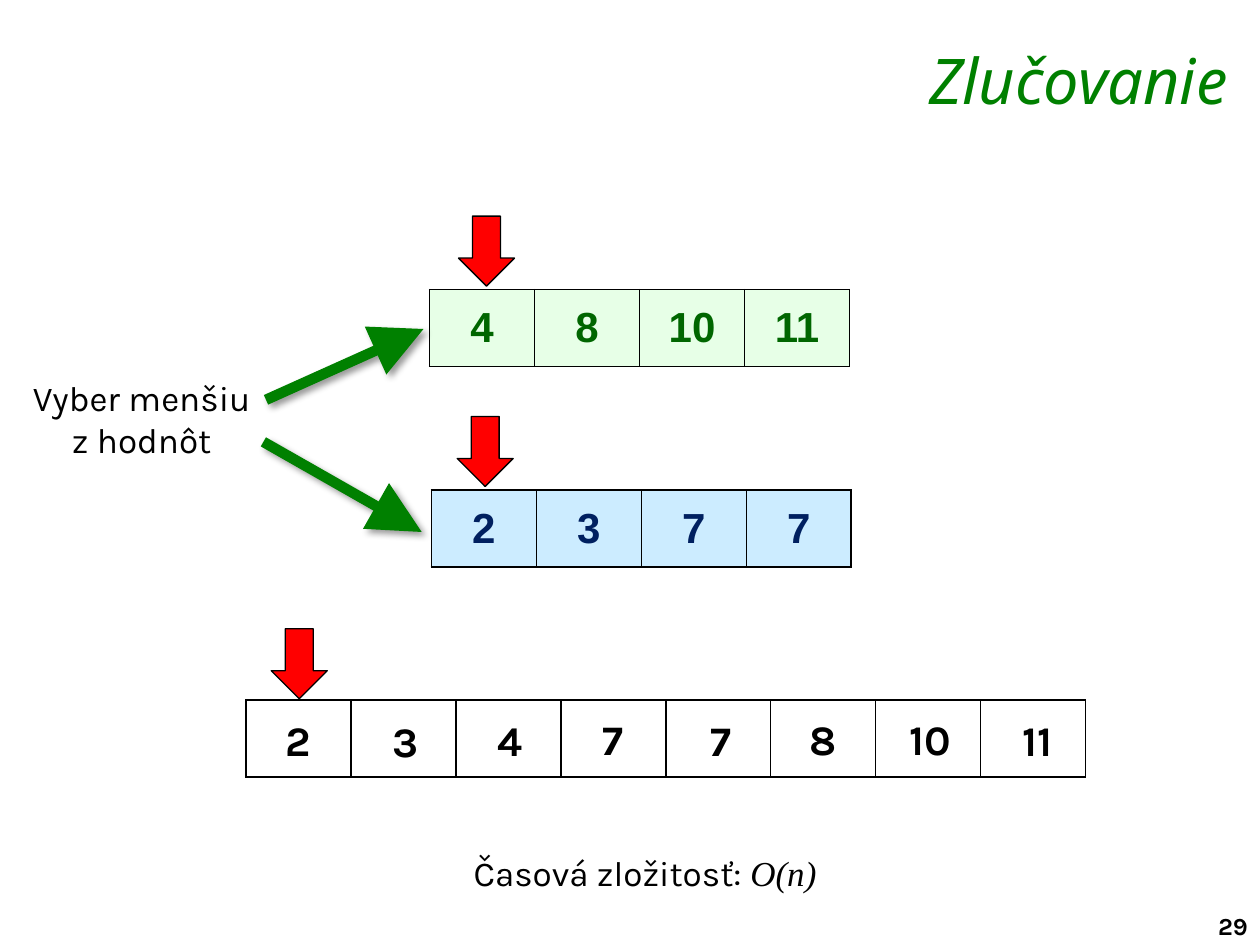
from dataclasses import dataclass

import lxml.etree
import pptx
import pptx.dml.color
import pptx.enum.shapes
import pptx.enum.text
import pptx.oxml
import pptx.oxml.ns
import pptx.util

Pt = pptx.util.Pt
RGB = pptx.dml.color.RGBColor.from_string
ALIGN = pptx.enum.text.PP_ALIGN
NS = pptx.oxml.ns.nsdecls("a")


@dataclass(frozen=True)
class Theme:
    black: str = "000000"
    green: str = "008000"
    red: str = "FF0000"
    green_fill: str = "E7FFE7"
    green_text: str = "006600"
    blue_fill: str = "CCECFF"
    blue_text: str = "002060"
    body: str = "Karla"
    heading: str = "Noto Sans"
    cells: str = "Arial"
    math: str = "Times New Roman"
    title_size: int = 36
    value_size: int = 24
    text_size: int = 20
    number_size: int = 14


T = Theme()
CELL_W, CELL_H = 60, 44


def add_text(s, text, box, size, align=ALIGN.CENTER, bold=False, wrap=True):
    """Add a one-paragraph text box in the body font and return its frame."""
    tf = s.shapes.add_textbox(*[Pt(v) for v in box]).text_frame
    tf.word_wrap = wrap
    p = tf.paragraphs[0]
    p.text = text
    p.alignment = align
    for r in p.runs:
        r.font.name, r.font.size, r.font.bold = T.body, Pt(size), bold
        r.font.color.rgb = RGB(T.black)
    return tf


def add_array(s, values, left, top, fill, color):
    """Add a one-row table with black borders."""
    n = len(values)
    tbl = s.shapes.add_table(1, n, Pt(left), Pt(top), Pt(n * CELL_W), Pt(CELL_H)).table
    tbl.first_row = tbl.horz_banding = False
    for i, value in enumerate(values):
        tbl.columns[i].width = Pt(CELL_W)
        cell = tbl.cell(0, i)
        cell.vertical_anchor = pptx.enum.text.MSO_ANCHOR.MIDDLE
        tc_pr = cell._tc.get_or_add_tcPr()
        for side in ("lnL", "lnR", "lnT", "lnB"):
            tc_pr.append(pptx.oxml.parse_xml(
                f'<a:{side} {NS} w="12700"><a:solidFill><a:srgbClr val="{T.black}"/>'
                f'</a:solidFill></a:{side}>'))
        if fill:
            cell.fill.solid()
            cell.fill.fore_color.rgb = RGB(fill)
        else:
            cell.fill.background()
        p = cell.text_frame.paragraphs[0]
        p.text = value
        p.alignment = ALIGN.CENTER
        for r in p.runs:
            r.font.name, r.font.size, r.font.bold = T.cells, Pt(T.value_size), True
            r.font.color.rgb = RGB(color)


prs = pptx.Presentation()
prs.slide_width, prs.slide_height = Pt(720), Pt(540)
s = prs.slides.add_slide(prs.slide_layouts[6])

# Slide number and title
add_text(s, "29", (689, 517, 37, 24), T.number_size, ALIGN.LEFT, True, wrap=False)
tf = add_text(s, "Zlučovanie", (165, 22.5, 543.5, 42), T.title_size, ALIGN.RIGHT)
tf.margin_top = Pt(1)
f = tf.paragraphs[0].runs[0].font
f.name, f.italic = T.heading, True
f.color.rgb = RGB(T.green)

# Merged array and the two sorted inputs
add_array(s, [""] * 8, 140.5, 400, None, T.black)
add_array(s, ["2", "3", "7", "7"], 246.5, 280, T.blue_fill, T.blue_text)
add_array(s, ["4", "8", "10", "11"], 245.5, 165.5, T.green_fill, T.green_text)

# Position markers
for left, top in ((262, 123.5), (261.25, 238), (155, 359.25)):
    sp = s.shapes.add_shape(pptx.enum.shapes.MSO_SHAPE.DOWN_ARROW,
                            Pt(left), Pt(top), Pt(32), Pt(40))
    sp.shadow.inherit = False
    sp.fill.solid()
    sp.fill.fore_color.rgb = RGB(T.red)
    sp.line.color.rgb = RGB(T.black)
    sp.line.width = Pt(0.75)

# Merged values: text, centre, top
for value, center, top in (("2", 170.5, 404.5), ("3", 232, 405.5), ("4", 291.5, 404.5),
                           ("7", 350.5, 404), ("7", 412, 404.5), ("8", 470.5, 404),
                           ("10", 531.5, 404), ("11", 593, 404.5)):
    add_text(s, value, (center - 29, top, 58, 36), T.value_size, bold=True)

# Instruction with arrows to both inputs
add_text(s, "Vyber menšiu\vz hodnôt", (0, 211.5, 162, 55.5), T.text_size)
for x1, y1, x2, y2 in ((152, 228.5, 242, 188), (150.5, 252.5, 241, 304)):
    ln = s.shapes.add_connector(pptx.enum.shapes.MSO_CONNECTOR.STRAIGHT,
                                Pt(x1), Pt(y1), Pt(x2), Pt(y2))
    ln.line.color.rgb = RGB(T.green)
    ln.line.width = Pt(6)
    tail = lxml.etree.SubElement(ln.line._get_or_add_ln(), pptx.oxml.ns.qn("a:tailEnd"))
    for key, val in (("type", "triangle"), ("w", "lg"), ("len", "lg")):
        tail.set(key, val)
    ln._element.spPr.append(pptx.oxml.parse_xml(
        f'<a:effectLst {NS}><a:outerShdw blurRad="{Pt(4)}" dist="{Pt(3)}" dir="2700000">'
        f'<a:srgbClr val="{T.black}"><a:alpha val="40000"/></a:srgbClr>'
        f'</a:outerShdw></a:effectLst>'))

# Complexity
tf = add_text(s, "Časová zložitosť: ", (263.5, 483, 215, 31.5), T.text_size,
              ALIGN.LEFT, wrap=False)
r = tf.paragraphs[0].add_run()
r.text = "O(n)"
r.font.name, r.font.size, r.font.italic = T.math, Pt(T.text_size), True
r.font.color.rgb = RGB(T.black)

prs.save("out.pptx")
